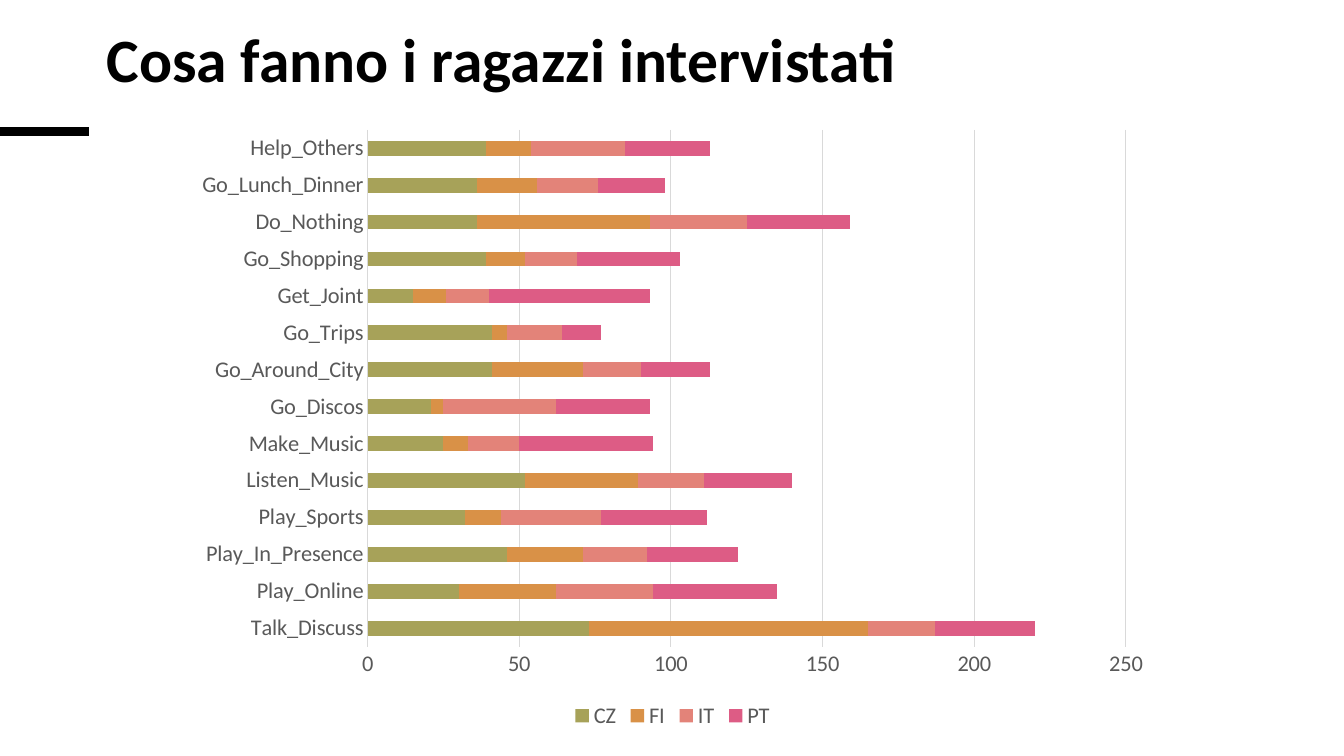
from lxml import etree
from pptx import Presentation
from pptx.chart.data import CategoryChartData
from pptx.dml.color import RGBColor
from pptx.enum.chart import XL_CHART_TYPE, XL_LEGEND_POSITION, XL_TICK_MARK
from pptx.enum.shapes import MSO_CONNECTOR
from pptx.enum.text import MSO_ANCHOR
from pptx.oxml.ns import qn
from pptx.util import Pt

PX = 9525
BAR_STACKED = XL_CHART_TYPE.BAR_STACKED
LEGEND_BOTTOM = XL_LEGEND_POSITION.BOTTOM
NO_TICK = XL_TICK_MARK.NONE
STRAIGHT = MSO_CONNECTOR.STRAIGHT
ANCHOR_TOP = MSO_ANCHOR.TOP

FONT = "Calibri"
BLACK, LABEL_GREY, GRID_GREY = "000000", "595959", "D9D9D9"

ACTIVITIES = [
    "Talk_Discuss", "Play_Online", "Play_In_Presence", "Play_Sports",
    "Listen_Music", "Make_Music", "Go_Discos", "Go_Around_City", "Go_Trips",
    "Get_Joint", "Go_Shopping", "Do_Nothing", "Go_Lunch_Dinner", "Help_Others",
]
COUNTRIES = {
    "CZ": ("A7A259", [73, 30, 46, 32, 52, 25, 21, 41, 41, 15, 39, 36, 36, 39]),
    "FI": ("D99147", [92, 32, 25, 12, 37, 8, 4, 30, 5, 11, 13, 57, 20, 15]),
    "IT": ("E38379", [22, 32, 21, 33, 22, 17, 37, 19, 18, 14, 17, 32, 20, 31]),
    "PT": ("DD5C85", [33, 41, 30, 35, 29, 44, 31, 23, 13, 53, 34, 34, 22, 28]),
}


def px(*lengths):
    return [length * PX for length in lengths]


def color(hex_value):
    return RGBColor.from_string(hex_value)


def format_font(font, hex_value, **values):
    for name, value in {"name": FONT, **values}.items():
        setattr(font, name, value)
    font.color.rgb = color(hex_value)


def format_line(line, hex_value, points):
    line.color.rgb = color(hex_value)
    line.width = Pt(points)


def add_rule(slide, ends, hex_value, points):
    rule = slide.shapes.add_connector(STRAIGHT, *px(*ends))
    format_line(rule.line, hex_value, points)
    etree.SubElement(rule._element.spPr, qn("a:effectLst"))


def add_title(slide, box, text):
    frame = slide.shapes.add_textbox(*px(*box)).text_frame
    frame.word_wrap = True
    frame.vertical_anchor = ANCHOR_TOP
    paragraph = frame.paragraphs[0]
    paragraph.text = text
    paragraph.line_spacing = 0.85
    format_font(paragraph.font, BLACK, size=Pt(44), bold=True)


def format_axis(axis):
    axis.major_tick_mark = axis.minor_tick_mark = NO_TICK
    format_font(axis.tick_labels.font, LABEL_GREY, size=Pt(16))


def add_activity_chart(slide, box):
    data = CategoryChartData()
    data.categories = ACTIVITIES
    for country, (_, answers) in COUNTRIES.items():
        data.add_series(country, answers)
    chart = slide.shapes.add_chart(BAR_STACKED, *px(*box), data).chart
    chart.has_title = False
    format_font(chart.font, BLACK, size=Pt(16))

    plot = chart.plots[0]
    plot.gap_width, plot.overlap = 150, 100
    plot.vary_by_categories = False
    for series, (hex_value, _) in zip(plot.series, COUNTRIES.values()):
        series.format.fill.solid()
        series.format.fill.fore_color.rgb = color(hex_value)

    format_axis(chart.category_axis)
    format_line(chart.category_axis.format.line, GRID_GREY, 0.75)
    format_axis(chart.value_axis)
    chart.value_axis.format.line.fill.background()
    format_line(chart.value_axis.major_gridlines.format.line, GRID_GREY, 0.75)

    chart.has_legend = True
    chart.legend.position = LEGEND_BOTTOM
    chart.legend.include_in_layout = False
    format_font(chart.legend.font, LABEL_GREY, size=Pt(16))


def main():
    presentation = Presentation()
    presentation.slide_width, presentation.slide_height = px(1280, 720)
    slide = presentation.slides.add_slide(presentation.slide_layouts[6])
    add_rule(slide, (0, 125, 85, 125), BLACK, 6.75)
    add_title(slide, (92, 26, 1042, 92), "Cosa fanno i ragazzi intervistati")
    add_activity_chart(slide, (174, 112, 933, 587))
    presentation.save("out.pptx")


if __name__ == "__main__":
    main()
